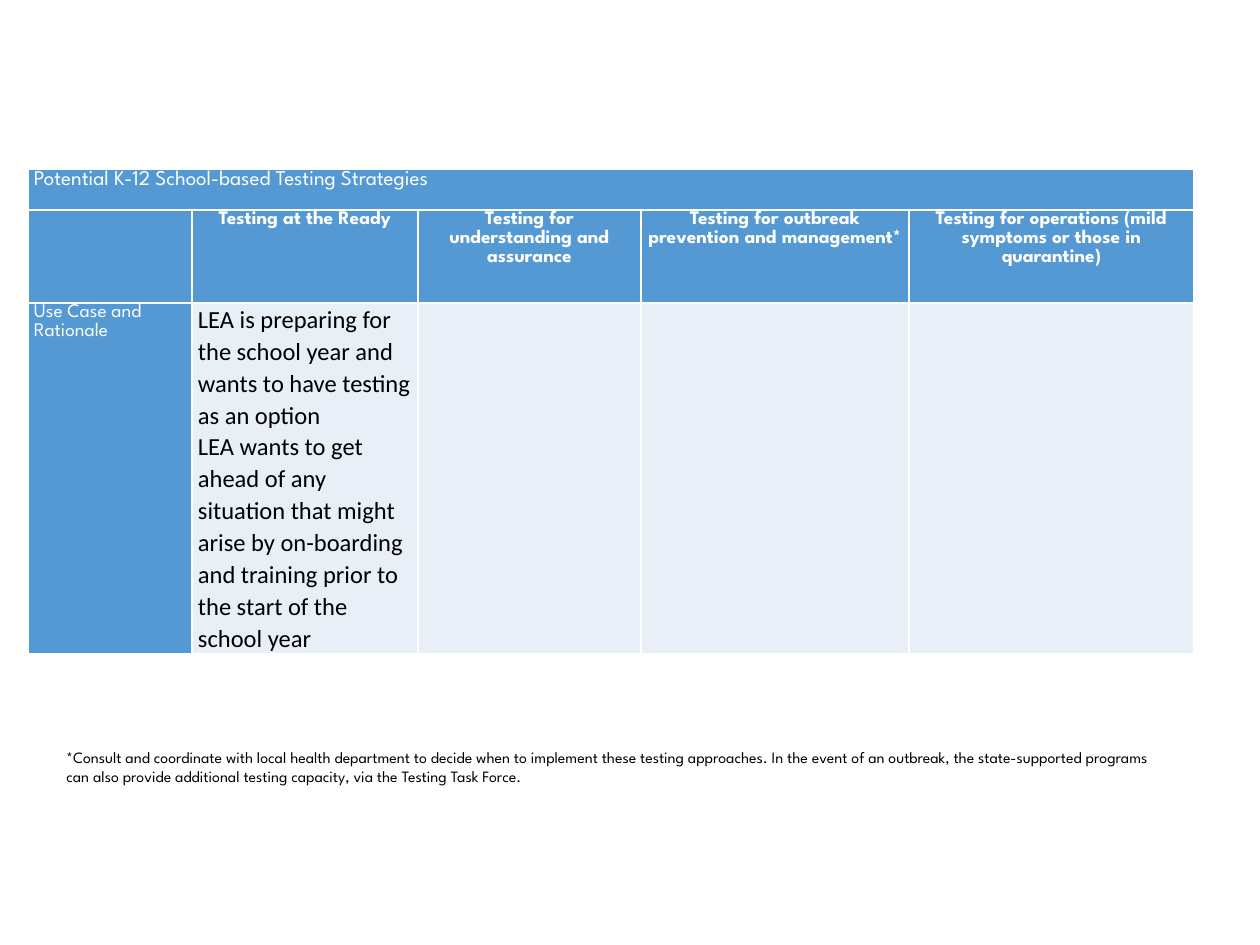
from dataclasses import dataclass

from lxml.etree import SubElement
from pptx import Presentation
from pptx.dml.color import RGBColor
from pptx.enum.text import PP_ALIGN
from pptx.oxml.ns import qn
from pptx.util import Pt

PX = 914400 / 126


@dataclass(frozen=True)
class Theme:
    blue: str = "5499D3"
    pale: str = "E9EFF7"
    white: str = "FFFFFF"
    black: str = "000000"
    display: str = "League Spartan"
    body: str = "Calibri"
    title_size: int = 12
    heading_size: int = 11
    body_size: int = 14
    note_size: int = 9


THEME = Theme()
COLUMNS = (164, 226, 223, 268, 285)
ROWS = (41, 93, 344)
TITLE = "Potential K-12 School-based Testing Strategies"
STRATEGIES = (
    "Testing at the Ready",
    "Testing for understanding and assurance",
    "Testing for outbreak prevention and management*",
    "Testing for operations (mild symptoms or those in quarantine)",
)
CRITERION = "Use Case and Rationale"
READY_RATIONALE = (
    "LEA is preparing for the school year and wants to have testing as an option\n"
    "LEA wants to get ahead of any situation that might arise by on-boarding "
    "and training prior to the start of the school year"
)
FOOTNOTE = (
    "*Consult and coordinate with local health department to decide when to "
    "implement these testing approaches. In the event of an outbreak, the "
    "state-supported programs can also provide additional testing capacity, "
    "via the Testing Task Force."
)


def px(length):
    return round(length * PX)


def write(frame, text, size, font, color, bold=False, align=PP_ALIGN.LEFT, spacing=None):
    frame.text = text
    for paragraph in frame.paragraphs:
        paragraph.alignment = align
        paragraph.line_spacing = spacing
        for run in paragraph.runs:
            run.font.size = Pt(size)
            run.font.name = font
            run.font.bold = bold
            run.font.color.rgb = RGBColor.from_string(color)


def style_cell(cell, fill):
    """Set the cell's insets, white borders and fill."""
    cell.margin_left = cell.margin_right = px(6)
    cell.margin_top = cell.margin_bottom = 0
    properties = cell._tc.get_or_add_tcPr()
    for side in ("a:lnL", "a:lnR", "a:lnT", "a:lnB"):
        border = SubElement(properties, qn(side), w=str(Pt(1)))
        paint = SubElement(border, qn("a:solidFill"))
        SubElement(paint, qn("a:srgbClr"), val=THEME.white)
    cell.fill.solid()
    cell.fill.fore_color.rgb = RGBColor.from_string(fill)


def write_heading(cell, text, size=THEME.heading_size, **options):
    write(cell.text_frame, text, size, THEME.display, THEME.white, spacing=1.07, **options)


def add_strategy_table(slide, left, top):
    strategies = slide.shapes.add_table(
        len(ROWS), len(COLUMNS), px(left), px(top), px(sum(COLUMNS)), px(sum(ROWS))
    ).table
    for column, width in zip(strategies.columns, COLUMNS):
        column.width = px(width)
    for row, height in zip(strategies.rows, ROWS):
        row.height = px(height)

    for row in range(len(ROWS)):
        for column in range(len(COLUMNS)):
            is_heading = row < 2 or column == 0
            style_cell(strategies.cell(row, column), THEME.blue if is_heading else THEME.pale)

    title = strategies.cell(0, 0)
    title.merge(strategies.cell(0, len(COLUMNS) - 1))
    write_heading(title, TITLE, THEME.title_size)
    for column, strategy in enumerate(STRATEGIES, start=1):
        write_heading(strategies.cell(1, column), strategy, bold=True, align=PP_ALIGN.CENTER)
    write_heading(strategies.cell(2, 0), CRITERION)
    write(strategies.cell(2, 1).text_frame, READY_RATIONALE, THEME.body_size,
          THEME.body, THEME.black, spacing=1.07)


def add_footnote(slide, left, top, width, height):
    frame = slide.shapes.add_textbox(px(left), px(top), px(width), px(height)).text_frame
    frame.word_wrap = True
    write(frame, FOOTNOTE, THEME.note_size, THEME.display, THEME.black)


def main():
    presentation = Presentation()
    presentation.slide_width = px(1260)
    presentation.slide_height = px(945)
    slide = presentation.slides.add_slide(presentation.slide_layouts[6])
    add_strategy_table(slide, 28, 169)
    add_footnote(slide, 54, 742, 1128, 79)
    presentation.save("out.pptx")


if __name__ == "__main__":
    main()
